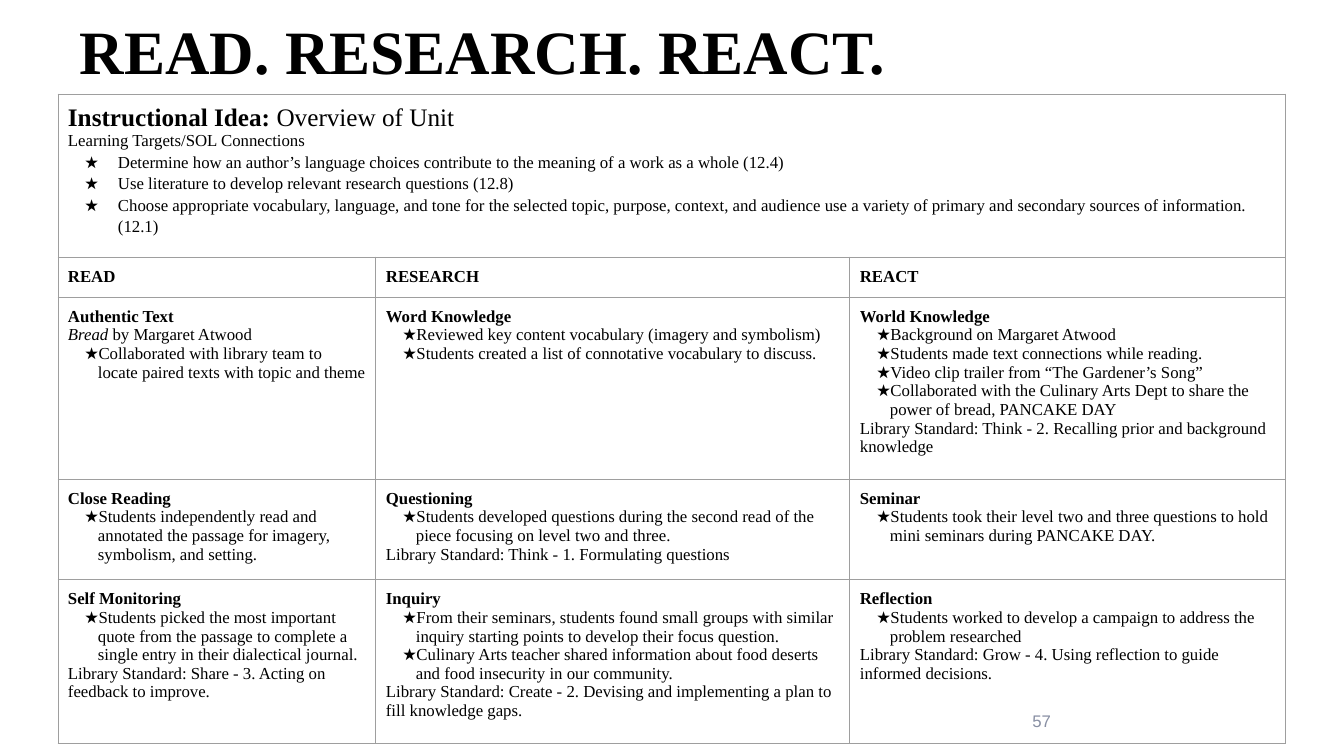
from lxml import etree
from pptx import Presentation
from pptx.dml.color import RGBColor
from pptx.enum.text import MSO_ANCHOR, PP_ALIGN
from pptx.oxml.ns import qn
from pptx.util import Pt

MIDDLE = MSO_ANCHOR.MIDDLE
LEFT, RIGHT = PP_ALIGN.LEFT, PP_ALIGN.RIGHT
PX = 9071  # EMU in one px
SERIF, SANS = "Times New Roman", "Arial"
COLORS = {"ink": "000000", "rule": "9E9E9E", "page": "888FA3"}
BOLD, ITALIC = {"bold": True}, {"italic": True}
COLS = [318, 474, 436]
ROWS = [157, 40, 182, 100, 164]


# Paragraph kinds: a list of runs, and the star's indent in px
def line(*runs):
    return {"runs": runs}


def head(text):
    return line((text, BOLD))


def plain(text):
    return line((text, {}))


def star(text, left=30, hang=13, space=None):
    return {"runs": [(text, {})], "left": left, "hang": hang, "space": space}


def goal(text):
    return star(text, 50, 33, 1.15)


INTRO = [
    line(("Instructional Idea: ", {"bold": True, "size": Pt(18)}),
         ("Overview of Unit", {"size": Pt(18)})),
    plain("Learning Targets/SOL Connections"),
    goal("Determine how an author’s language choices contribute to the meaning of a work as a whole (12.4)"),
    goal("Use literature to develop relevant research questions (12.8)"),
    goal("Choose appropriate vocabulary, language, and tone for the selected topic, purpose, context, "
         "and audience use a variety of primary and secondary sources of information. (12.1)"),
]

GRID = [
    [INTRO],
    [[head("READ")], [head("RESEARCH")], [head("REACT")]],
    [
        [head("Authentic Text"),
         line(("Bread ", ITALIC), ("by Margaret Atwood", {})),
         star("Collaborated with library team to locate paired texts with topic and theme")],
        [head("Word Knowledge"),
         star("Reviewed key content vocabulary (imagery and symbolism)"),
         star("Students created a list of connotative vocabulary to discuss.")],
        [head("World Knowledge"),
         star("Background on Margaret Atwood"),
         star("Students made text connections while reading."),
         star("Video clip trailer from “The Gardener’s Song”"),
         star("Collaborated with the Culinary Arts Dept to share the power of bread, PANCAKE DAY"),
         plain("Library Standard: Think - 2. Recalling prior and background knowledge")],
    ],
    [
        [head("Close Reading"),
         star("Students independently read and annotated the passage for imagery, symbolism, and setting.")],
        [head("Questioning"),
         star("Students developed questions during the second read of the piece focusing on level two and three."),
         plain("Library Standard: Think - 1. Formulating questions")],
        [head("Seminar"),
         star("Students took their level two and three questions to hold mini seminars during PANCAKE DAY.")],
    ],
    [
        [head("Self Monitoring"),
         star("Students picked the most important quote from the passage to complete a single entry "
              "in their dialectical journal."),
         plain("Library Standard: Share - 3. Acting on feedback to improve.")],
        [head("Inquiry"),
         star("From their seminars, students found small groups with similar inquiry starting points "
              "to develop their focus question."),
         star("Culinary Arts teacher shared information about food deserts and food insecurity in our community."),
         plain("Library Standard: Create - 2. Devising and implementing a plan to fill knowledge gaps.")],
        [head("Reflection"),
         star("Students worked to develop a campaign to address the problem researched"),
         plain("Library Standard: Grow - 4. Using reflection to guide informed decisions.")],
    ],
]


def assign(item, values):
    for name, value in values.items():
        setattr(item, name, value)


def add_run(para, text, color="ink", **style):
    run = para.add_run()
    run.text = text
    base = {"name": SERIF, "size": Pt(12), "bold": False, "italic": False}
    assign(run.font, {**base, **style})
    run.font.color.rgb = RGBColor.from_string(COLORS[color])


def add_color(parent, color):
    etree.SubElement(parent, qn("a:srgbClr"), val=COLORS[color])


def add_star(para, left, hang):
    props = para._p.get_or_add_pPr()
    props.set("marL", str(left * PX))
    props.set("indent", str(-hang * PX))
    add_color(etree.SubElement(props, qn("a:buClr")), "ink")
    etree.SubElement(props, qn("a:buFont"), typeface=SERIF)
    etree.SubElement(props, qn("a:buChar"), char="★")


def add_label(slide, box, text, align, space=None, **style):
    shape = slide.shapes.add_textbox(*[n * PX for n in box])
    frame = shape.text_frame
    assign(frame, {"word_wrap": True, "vertical_anchor": MIDDLE})
    para = frame.paragraphs[0]
    assign(para, {"alignment": align, "line_spacing": space})
    add_run(para, text, **style)


def fill_cell(cell, parts):
    for i, part in enumerate(parts):
        frame = cell.text_frame
        para = frame.add_paragraph() if i else frame.paragraphs[0]
        if "left" in part:
            para.line_spacing = part["space"]
            add_star(para, part["left"], part["hang"])
        for text, style in part["runs"]:
            add_run(para, text, **style)


def frame_cell(cell):
    sides = ("left", "right", "top", "bottom")
    assign(cell, {f"margin_{side}": 10 * PX for side in sides})
    props = cell._tc.get_or_add_tcPr()
    for side in "LRTB":
        edge = etree.SubElement(props, qn(f"a:ln{side}"), w=str(Pt(0.75)))
        add_color(etree.SubElement(edge, qn("a:solidFill")), "rule")
    cell.fill.background()


def add_grid(slide, left, top):
    size = [n * PX for n in (left, top, sum(COLS), sum(ROWS))]
    table = slide.shapes.add_table(len(ROWS), len(COLS), *size).table
    assign(table, {"first_row": False, "horz_banding": False})
    for col, width in zip(table.columns, COLS):
        col.width = width * PX
    for row, height in zip(table.rows, ROWS):
        row.height = height * PX
    for cell in table.iter_cells():
        frame_cell(cell)
    table.cell(0, 0).merge(table.cell(0, len(COLS) - 1))
    for r, row in enumerate(GRID):
        for c, parts in enumerate(row):
            fill_cell(table.cell(r, c), parts)


def main():
    deck = Presentation()
    assign(deck, {"slide_width": 1344 * PX, "slide_height": 756 * PX})
    slide = deck.slides.add_slide(deck.slide_layouts[6])
    # Page number and title
    add_label(slide, (949, 701, 112, 40), "57", RIGHT, name=SANS, color="page")
    add_label(slide, (70, -18, 1159, 146), "READ. RESEARCH. REACT.", LEFT, 0.9,
              size=Pt(44), bold=True)
    # Unit plan
    add_grid(slide, 58, 94)
    deck.save("out.pptx")


if __name__ == "__main__":
    main()
